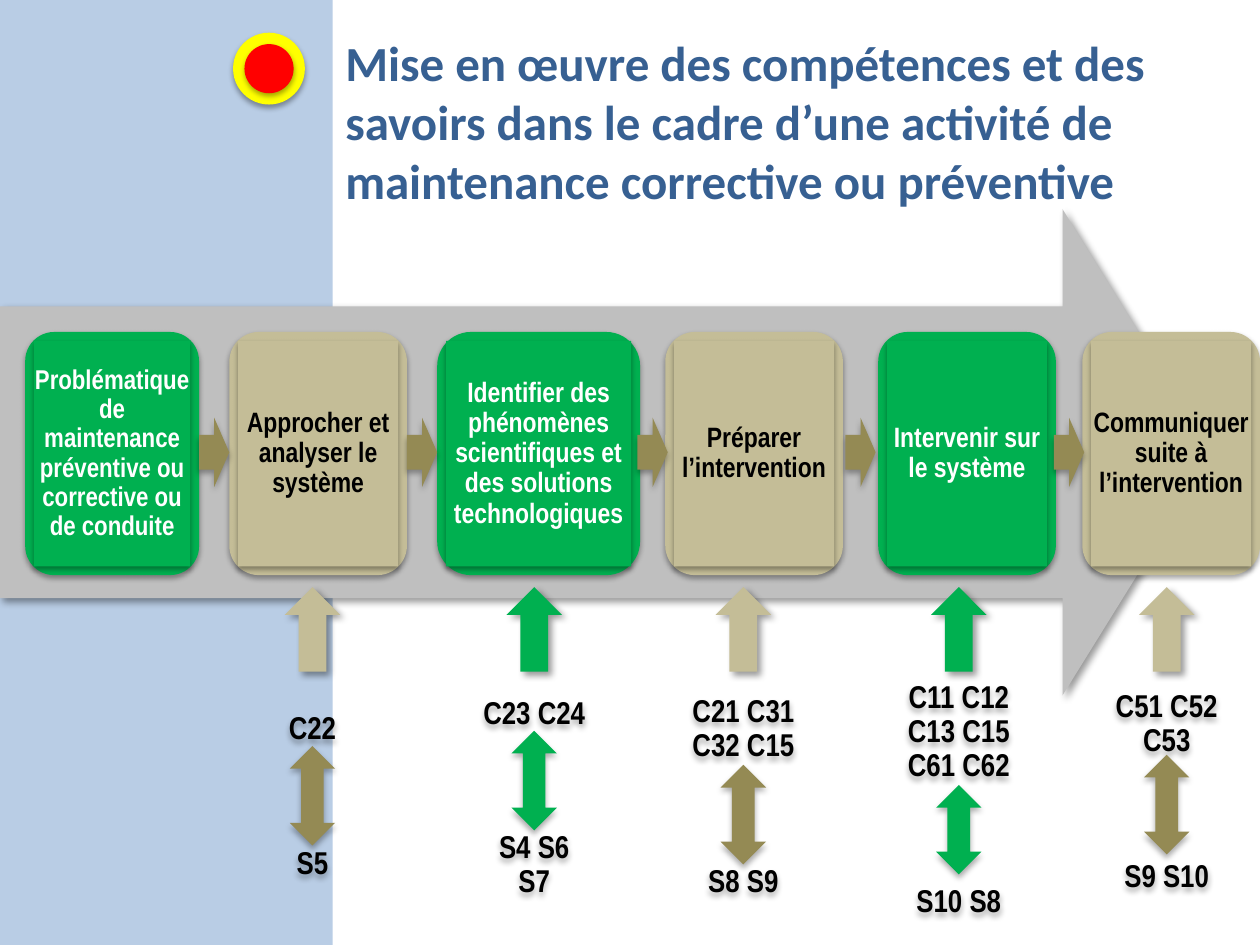
from lxml.etree import SubElement
from pptx import Presentation
from pptx.dml.color import RGBColor
from pptx.enum.shapes import MSO_SHAPE
from pptx.enum.text import MSO_ANCHOR, MSO_AUTO_SIZE, PP_ALIGN
from pptx.oxml.ns import qn
from pptx.util import Inches, Pt

BLACK = RGBColor(0x00, 0x00, 0x00)
WHITE = RGBColor(0xFF, 0xFF, 0xFF)
BLUE = RGBColor(0x37, 0x60, 0x92)
PALE_BLUE = RGBColor(0xB9, 0xCD, 0xE5)
GREY = RGBColor(0xBF, 0xBF, 0xBF)
GREEN = RGBColor(0x00, 0xB0, 0x50)
SAND = RGBColor(0xC4, 0xBD, 0x97)
OLIVE = RGBColor(0x94, 0x8A, 0x54)
YELLOW = RGBColor(0xFF, 0xFF, 0x00)
RED = RGBColor(0xFF, 0x00, 0x00)

SOFT = (35, 3.1, 1.8, 90)
LINK = (32, 3.5, 2.2, 90)
DIAGONAL = (40, 4, 3, 45)

STEPS = [
    (0.2, 1.38, GREEN, 15.5, "Problématique de maintenance préventive ou corrective ou de conduite"),
    (1.82, 1.41, SAND, 16, "Approcher et analyser le système"),
    (3.47, 1.61, GREEN, 16,
     "Identifier des phénomènes scientifiques et des solutions technologiques"),
    (5.28, 1.41, SAND, 16, "Préparer l’intervention"),
    (6.97, 1.41, GREEN, 16, "Intervenir sur le système"),
    (8.59, 1.41, SAND, 16, "Communiquer suite à l’intervention"),
]
SKILLS = [
    (2.48, SAND, OLIVE, "C22", 5.79, 5.92, 0.79, "S5", 6.86),
    (4.24, GREEN, GREEN, "C23 C24", 5.67, 5.8, 0.79, "S4 S6 S7", 6.87),
    (5.9, SAND, OLIVE, "C21 C31 C32 C15", 5.79, 6.07, 0.79, "S8 S9", 7.0),
    (7.61, GREEN, GREEN, "C11 C12 C13 C15 C61 C62", 5.81, 6.23, 0.71, "S10 S8", 7.16),
    (9.26, SAND, OLIVE, "C51 C52 C53", 5.75, 5.99, 0.79, "S9 S10", 6.96),
]


def add_shadow(sp, alpha, blur, dist, angle):
    sp.shadow.inherit = False
    effects = sp._element.spPr.find(qn("a:effectLst"))
    outer = SubElement(effects, qn("a:outerShdw"), blurRad=str(Pt(blur)), dist=str(Pt(dist)),
                       dir=str(angle * 60000), rotWithShape="0")
    color = SubElement(outer, qn("a:srgbClr"), val="000000")
    SubElement(color, qn("a:alpha"), val=str(alpha * 1000))


def add_block(s, kind, x, y, w, h, color, shadow=None):
    sp = s.shapes.add_shape(kind, Inches(x), Inches(y), Inches(w), Inches(h))
    sp.fill.solid()
    sp.fill.fore_color.rgb = color
    sp.line.fill.background()
    sp.shadow.inherit = False
    if shadow:
        add_shadow(sp, *shadow)
    return sp


def write(sp, text, size, color):
    tf = sp.text_frame
    tf.word_wrap = True
    tf.vertical_anchor = MSO_ANCHOR.MIDDLE
    tf.margin_left = tf.margin_right = tf.margin_top = tf.margin_bottom = 0
    p = tf.paragraphs[0]
    p.text = text
    p.alignment = PP_ALIGN.CENTER
    p.line_spacing = 0.9
    p.font.name = "Arial Narrow"
    p.font.size = Pt(size)
    p.font.bold = True
    p.font.color.rgb = color


def add_title(s, x, y, w, h):
    sp = s.shapes.title
    sp.left, sp.top, sp.width, sp.height = Inches(x), Inches(y), Inches(w), Inches(h)
    tf = sp.text_frame
    tf.word_wrap = True
    tf.auto_size = MSO_AUTO_SIZE.NONE
    tf.vertical_anchor = MSO_ANCHOR.TOP
    p = tf.paragraphs[0]
    p.text = ("Mise en œuvre des compétences et des savoirs dans le cadre "
              "d’une activité de maintenance corrective ou préventive")
    p.alignment = PP_ALIGN.LEFT
    p.font.name = "Calibri"
    p.font.size = Pt(28)
    p.font.bold = True
    p.font.color.rgb = BLUE


def add_marker(s, x, y, size):
    ring = 0.09
    add_block(s, MSO_SHAPE.OVAL, x, y, size, size, YELLOW, SOFT)
    add_block(s, MSO_SHAPE.OVAL, x + ring, y + ring, size - 2 * ring, size - 2 * ring, RED, SOFT)


def add_process(s, x, y, w, h):
    arrow = add_block(s, MSO_SHAPE.RIGHT_ARROW, x, y, w, h, GREY, DIAGONAL)
    arrow.adjustments[0] = 0.6
    arrow.adjustments[1] = 0.31
    middle = y + h / 2
    card_h, inset = 1.93, 0.07
    top = middle + 0.01 - card_h / 2
    for left, width, color, size, text in STEPS:
        add_block(s, MSO_SHAPE.ROUNDED_RECTANGLE, x + left, top, width, card_h, color, SOFT)
        panel = add_block(s, MSO_SHAPE.RECTANGLE, x + left + inset, top + inset,
                          width - 2 * inset, card_h - 2 * inset, color, SOFT)
        write(panel, text, size, WHITE if color == GREEN else BLACK)
    link_w, link_h = 0.24, 0.55
    for (left, width, *_), (following, *_) in zip(STEPS, STEPS[1:]):
        center = x + (left + width + following) / 2
        add_block(s, MSO_SHAPE.RIGHT_ARROW, center - link_w / 2, middle - link_h / 2,
                  link_w, link_h, OLIVE, LINK)


def add_codes(s, center, middle, w, text):
    h = 0.8
    sp = s.shapes.add_textbox(Inches(center - w / 2), Inches(middle - h / 2), Inches(w), Inches(h))
    write(sp, text, 18, BLACK)
    add_shadow(sp, *LINK)


def add_skills(s, y):
    up_w, up_h, link_w = 0.44, 0.67, 0.36
    for center, up, link, skills, skills_y, link_y, link_h, knowledge, knowledge_y in SKILLS:
        add_codes(s, center, skills_y, 1, skills)
        add_codes(s, center, knowledge_y, 0.8, knowledge)
        add_block(s, MSO_SHAPE.UP_ARROW, center - up_w / 2, y, up_w, up_h, up, DIAGONAL)
        add_block(s, MSO_SHAPE.UP_DOWN_ARROW, center - link_w / 2, link_y, link_w, link_h, link, LINK)


def main():
    prs = Presentation()
    prs.slide_width, prs.slide_height = Inches(10), Inches(7.5)
    s = prs.slides.add_slide(prs.slide_layouts[5])
    add_block(s, MSO_SHAPE.RECTANGLE, 0, 0, 2.64, 7.5, PALE_BLUE)
    add_process(s, 0, 1.66, 9.63, 3.86)
    add_skills(s, 4.66)
    add_title(s, 2.64, 0.21, 7.36, 1.05)
    add_marker(s, 1.85, 0.26, 0.57)
    prs.save("out.pptx")


if __name__ == "__main__":
    main()
